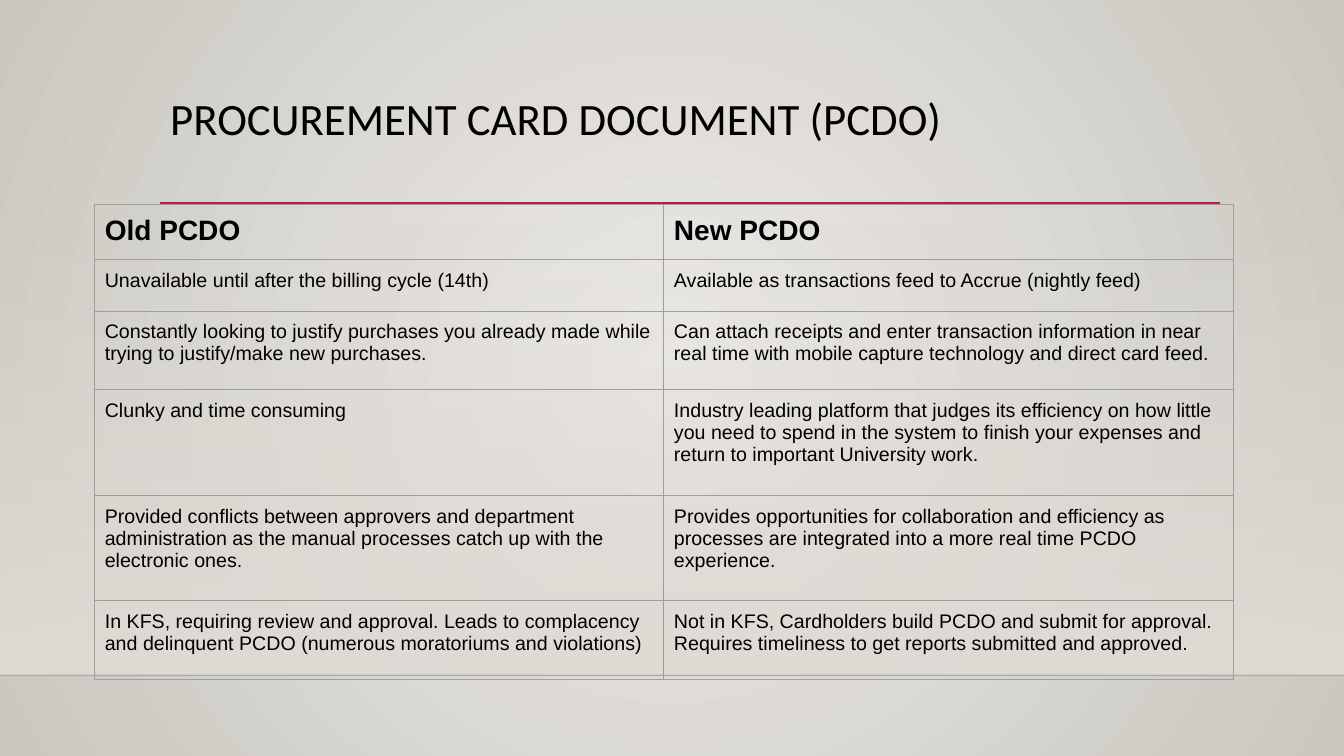
from typing import NamedTuple

from lxml.etree import SubElement
from pptx import Presentation
from pptx.dml.color import RGBColor
from pptx.enum.shapes import MSO_CONNECTOR as Connector, MSO_SHAPE as Shape
from pptx.enum.text import MSO_ANCHOR as Anchor
from pptx.oxml import parse_xml
from pptx.oxml.ns import nsdecls, qn
from pptx.util import Emu, Inches, Pt

BLACK = RGBColor(0x00, 0x00, 0x00)
HORIZON = RGBColor(0x00, 0x00, 0x01)
CRIMSON = RGBColor(0xB7, 0x1E, 0x42)
BORDER = RGBColor(0x9E, 0x9E, 0x9E)
CENTRE = RGBColor(0xEC, 0xEA, 0xE7)
EDGE = RGBColor(0xCA, 0xC7, 0xC1)
WALL = RGBColor(0xDF, 0xDB, 0xD5)

prs = Presentation()
prs.slide_width, prs.slide_height = Inches(13.33), Inches(7.5)


def across(percent: float) -> Emu:
    return Emu(round(prs.slide_width * percent / 100))


def down(percent: float) -> Emu:
    return Emu(round(prs.slide_height * percent / 100))


class Rule(NamedTuple):
    left: float
    right: float
    top: float
    color: RGBColor
    width: float
    opacity: int


class Row(NamedTuple):
    height: float
    old: str
    new: str
    size: int = 14
    bold: bool = False


TITLE_LEFT, TABLE_LEFT = 11.93, 7.05
WALL_TOP, HORIZON_TOP = 29.47, 89.33

RULES = [
    Rule(0, 100, HORIZON_TOP, HORIZON, 1, 20),
    Rule(TITLE_LEFT, 90.77, 26.93, CRIMSON, 2.5, 100),
]

ROWS = [
    Row(7.28, "Old PCDO", "New PCDO", 20, True),
    Row(6.8, "Unavailable until after the billing cycle (14th)",
        "Available as transactions feed to Accrue (nightly feed)"),
    Row(10.4, "Constantly looking to justify purchases you already made while "
        "trying to justify/make new purchases.",
        "Can attach receipts and enter transaction information in near real "
        "time with mobile capture technology and direct card feed."),
    Row(14, "Clunky and time consuming",
        "Industry leading platform that judges its efficiency on how little "
        "you need to spend in the system to finish your expenses and return "
        "to important University work."),
    Row(13.95, "Provided conflicts between approvers and department "
        "administration as the manual processes catch up with the electronic ones.",
        "Provides opportunities for collaboration and efficiency as processes "
        "are integrated into a more real time PCDO experience."),
    Row(10.4, "In KFS, requiring review and approval. Leads to complacency and "
        "delinquent PCDO (numerous moratoriums and violations)",
        "Not in KFS, Cardholders build PCDO and submit for approval. Requires "
        "timeliness to get reports submitted and approved."),
]


def set_gradient(fill, start: RGBColor, end: RGBColor) -> None:
    fill.gradient()
    for stop, color, position in zip(fill.gradient_stops, (start, end), (0, 1)):
        stop.color.rgb = color
        stop.position = position


def set_opacity(element, percent: int) -> None:
    color = next(element.iter(qn("a:srgbClr")))
    SubElement(color, qn("a:alpha"), val=str(percent * 1000))


def add_run(p, text: str, font: str, size: int, bold: bool = False) -> None:
    r = p.add_run()
    r.text = text
    r.font.name, r.font.size, r.font.bold = font, Pt(size), bold
    r.font.color.rgb = BLACK


def add_rule(s, rule: Rule) -> None:
    line = s.shapes.add_connector(Connector.STRAIGHT, across(rule.left), down(rule.top),
                                  across(rule.right), down(rule.top))
    line.line.color.rgb = rule.color
    line.line.width = Pt(rule.width)
    props = line._element.spPr
    if rule.opacity < 100:
        set_opacity(props, rule.opacity)
    SubElement(props, qn("a:effectLst"))


def fill_cell(cell, text: str, row: Row) -> None:
    cell.margin_left = cell.margin_right = Inches(0.1)
    cell.margin_top = cell.margin_bottom = Inches(0.1)
    cell.vertical_anchor = Anchor.TOP
    cell.fill.background()
    add_run(cell.text_frame.paragraphs[0], text, "Arial", row.size, row.bold)
    props = cell._tc.get_or_add_tcPr()
    for i, side in enumerate("LRTB"):
        props.insert(i, parse_xml(
            f'<a:ln{side} {nsdecls("a")} w="{Pt(0.75)}"><a:solidFill>'
            f'<a:srgbClr val="{BORDER}"/></a:solidFill></a:ln{side}>'))


def add_comparison(s) -> None:
    table = s.shapes.add_table(len(ROWS), 2, across(TABLE_LEFT), down(27.07), across(84.7),
                               down(sum(row.height for row in ROWS))).table
    table.first_row = table.horz_banding = False
    for i, row in enumerate(ROWS):
        table.rows[i].height = down(row.height)
        for j, text in enumerate((row.old, row.new)):
            fill_cell(table.cell(i, j), text, row)


def main() -> None:
    s = prs.slides.add_slide(prs.slide_layouts[6])

    # Radial background
    set_gradient(s.background.fill, CENTRE, EDGE)
    linear = next(s._element.iter(qn("a:lin")))
    linear.getparent().replace(linear, parse_xml(
        f'<a:path {nsdecls("a")} path="circle">'
        '<a:fillToRect l="50000" t="50000" r="50000" b="50000"/></a:path>'))

    # Wall that fades in towards the horizon
    wall = s.shapes.add_shape(Shape.RECTANGLE, 0, down(WALL_TOP), prs.slide_width,
                              down(HORIZON_TOP - WALL_TOP))
    wall.shadow.inherit = False
    wall.line.fill.background()
    set_gradient(wall.fill, WALL, WALL)
    wall.fill.gradient_angle = 270
    set_opacity(wall._element.spPr, 0)

    # Horizon and title rule
    for rule in RULES:
        add_rule(s, rule)

    # Title
    tf = s.shapes.add_textbox(across(TITLE_LEFT), down(11.73),
                              across(78.77), down(15.33)).text_frame
    tf.word_wrap = True
    tf.margin_top = Inches(0.08)
    p = tf.paragraphs[0]
    p.line_spacing = 0.9
    add_run(p, "PROCUREMENT CARD DOCUMENT (PCDO)", "Calibri", 32)

    # Old and new side by side
    add_comparison(s)

    prs.save("out.pptx")


if __name__ == "__main__":
    main()
